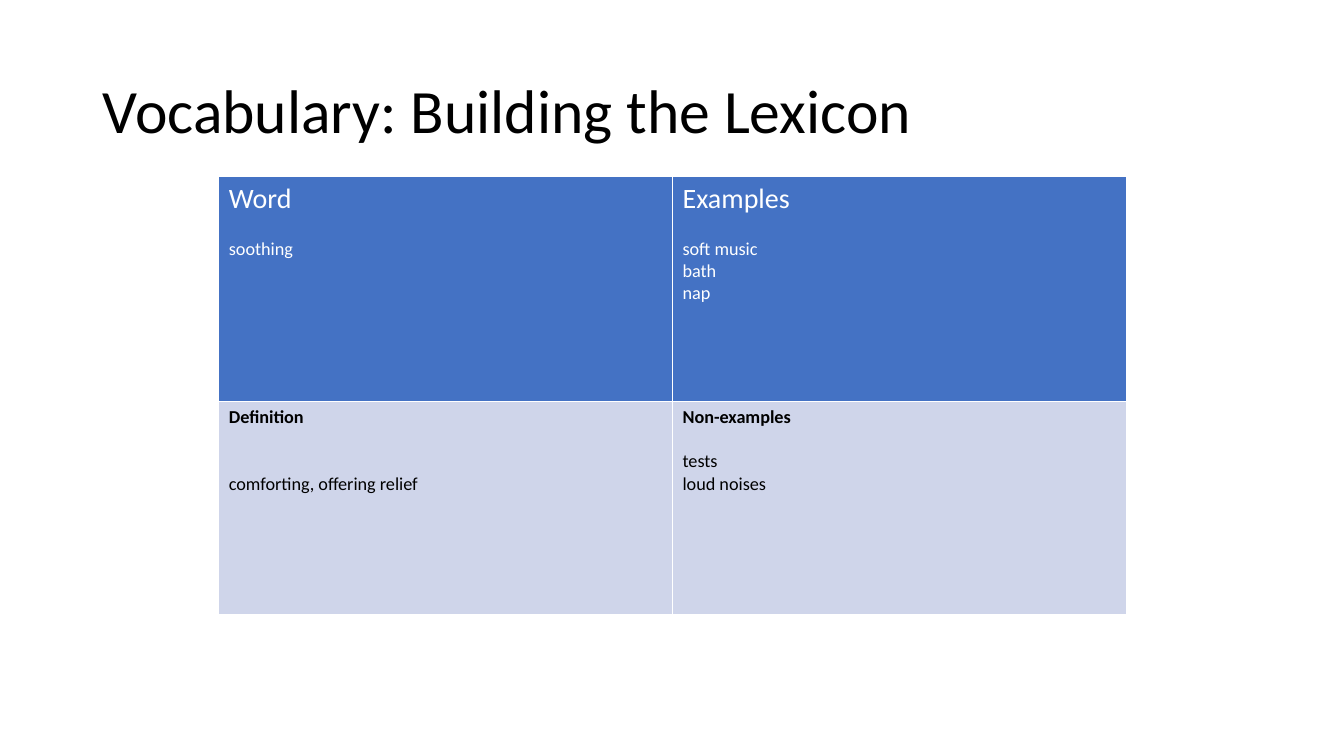
"""Build a vocabulary slide with a four-part word study table."""
from dataclasses import dataclass

from lxml.etree import SubElement
from pptx import Presentation
from pptx.dml.color import RGBColor
from pptx.enum.text import MSO_ANCHOR
from pptx.oxml.ns import qn
from pptx.util import Inches, Pt

TITLE = "Vocabulary: Building the Lexicon"
STUDY_ROWS = [
    [("Word", 1, ["soothing"]),
     ("Examples", 1, ["soft music", "bath", "nap"])],
    [("Definition", 2, ["comforting, offering relief"]),
     ("Non-examples", 1, ["tests", "loud noises"])],
]
ROW_HEIGHTS = [2.23, 2.12]
COLUMN_WIDTH = 4.5
TABLE_LEFT, TABLE_TOP = 2.17, 1.75


@dataclass(frozen=True)
class RowStyle:
    fill: str
    text: str
    heading_size: int
    heading_bold: bool


@dataclass(frozen=True)
class Theme:
    font: str = "Calibri"
    title_color: str = "000000"
    title_size: int = 44
    body_size: int = 13
    line_height: float = 1.22
    border: str = "FFFFFF"
    border_width: int = 1
    rows: tuple = (RowStyle("4472C4", "FFFFFF", 20, False),
                   RowStyle("CFD5EA", "000000", 13, True))


THEME = Theme()


def set_font(paragraph, size, color, bold=False):
    font = paragraph.font
    font.name, font.size, font.bold = THEME.font, Pt(size), bold
    font.color.rgb = RGBColor.from_string(color)


def add_title(slide):
    frame = slide.shapes.add_textbox(
        Inches(0.92), Inches(0.4), Inches(11.5), Inches(1.45)).text_frame
    frame.word_wrap = True
    frame.vertical_anchor = MSO_ANCHOR.MIDDLE
    heading = frame.paragraphs[0]
    heading.text = TITLE
    heading.line_spacing = 0.9
    set_font(heading, THEME.title_size, THEME.title_color)


def add_borders(cell):
    properties = cell._tc.get_or_add_tcPr()
    for side in ("a:lnL", "a:lnR", "a:lnT", "a:lnB"):
        line = SubElement(properties, qn(side), w=str(Pt(THEME.border_width)))
        fill = SubElement(line, qn("a:solidFill"))
        SubElement(fill, qn("a:srgbClr"), val=THEME.border)


def fill_cell(cell, part, style):
    heading_text, gap_lines, entries = part
    add_borders(cell)
    cell.fill.solid()
    cell.fill.fore_color.rgb = RGBColor.from_string(style.fill)
    heading = cell.text_frame.paragraphs[0]
    heading.text = heading_text
    heading.space_after = Pt(gap_lines * THEME.body_size * THEME.line_height)
    set_font(heading, style.heading_size, style.text, style.heading_bold)
    for entry_text in entries:
        entry = cell.text_frame.add_paragraph()
        entry.text = entry_text
        set_font(entry, THEME.body_size, style.text)


def add_study_table(slide):
    column_count = len(STUDY_ROWS[0])
    study = slide.shapes.add_table(
        len(STUDY_ROWS), column_count, Inches(TABLE_LEFT), Inches(TABLE_TOP),
        Inches(COLUMN_WIDTH * column_count), Inches(sum(ROW_HEIGHTS))).table
    for r, (parts, height) in enumerate(zip(STUDY_ROWS, ROW_HEIGHTS)):
        study.rows[r].height = Inches(height)
        for c, part in enumerate(parts):
            fill_cell(study.cell(r, c), part, THEME.rows[r])


def main():
    deck = Presentation()
    deck.slide_width, deck.slide_height = Inches(13.33), Inches(7.5)
    slide = deck.slides.add_slide(deck.slide_layouts[6])
    add_title(slide)
    add_study_table(slide)
    deck.save("out.pptx")


if __name__ == "__main__":
    main()
